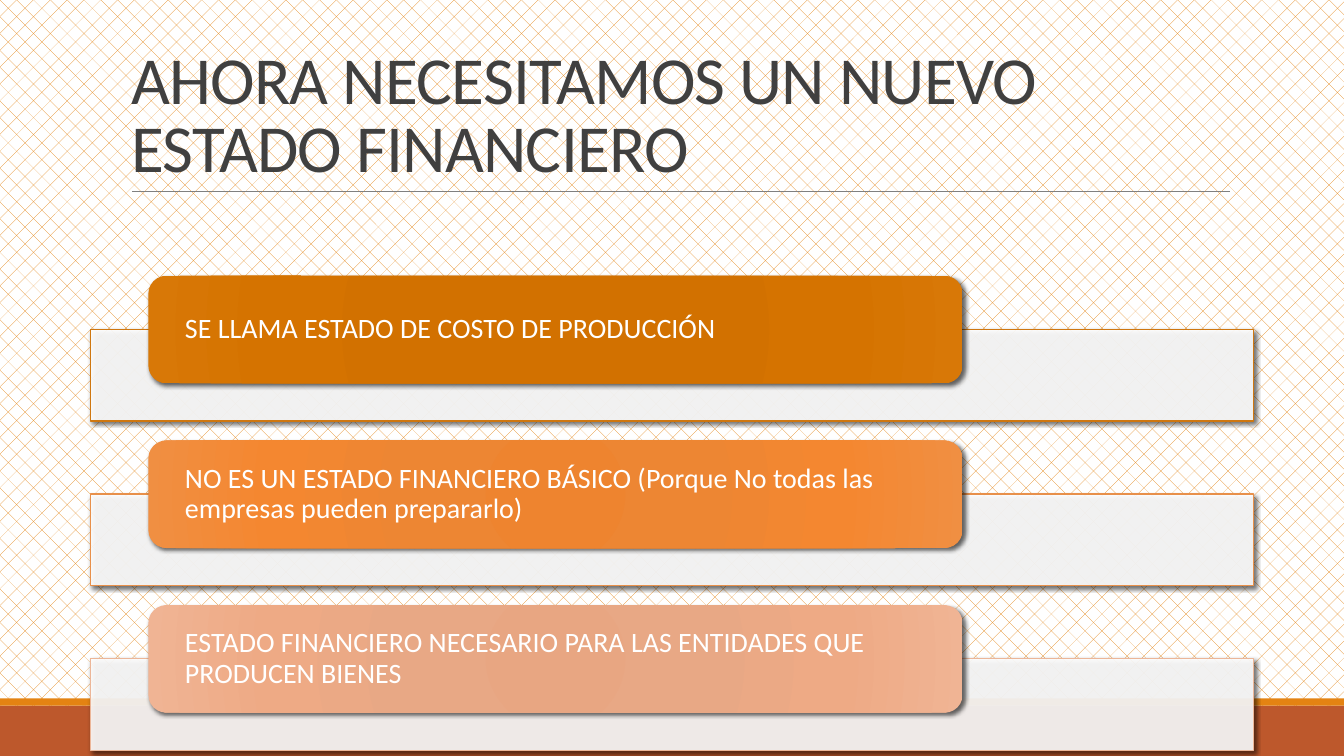
from pptx import Presentation
from pptx.dml.color import RGBColor
from pptx.enum.dml import MSO_PATTERN
from pptx.enum.shapes import MSO_CONNECTOR, MSO_SHAPE
from pptx.enum.text import MSO_ANCHOR, MSO_AUTO_SIZE, PP_ALIGN
from pptx.oxml import parse_xml
from pptx.oxml.ns import nsdecls, qn
from pptx.util import Cm, Pt

SLIDE_WIDTH = 33.87
STATEMENT_PITCH = 4.15
STATEMENTS = [
    ("SE LLAMA ESTADO DE COSTO DE PRODUCCIÓN",
     "CF7710", ["D07000", "D27100", "D57300", "D87807"]),
    ("NO ES UN ESTADO FINANCIERO BÁSICO (Porque No todas las empresas pueden prepararlo)",
     "E8904A", ["EE842F", "ED8633", "F48730", "F08F42"]),
    ("ESTADO FINANCIERO NECESARIO PARA LAS ENTIDADES QUE PRODUCEN BIENES",
     "ECB698", ["E8A682", "E8A885", "EEAA85", "F0B494"]),
]


def color(hex_value):
    """Turn a hex string into a colour."""
    return RGBColor.from_string(hex_value)


def set_background(slide):
    """Cover the slide with an orange diamond pattern on white."""
    fill = slide.background.fill
    fill.patterned()
    fill.pattern = MSO_PATTERN.DOTTED_DIAMOND
    fill.fore_color.rgb = color("E48312")
    fill.back_color.rgb = color("FFFFFF")


def add_block(slide, kind, left, top, width, height, fill):
    """Add a filled shape without outline or shadow."""
    shape = slide.shapes.add_shape(kind, Cm(left), Cm(top), Cm(width), Cm(height))
    shape.fill.solid()
    shape.fill.fore_color.rgb = color(fill)
    shape.line.fill.background()
    shape.shadow.inherit = False
    return shape


def add_shadow(shape, blur):
    """Cast a soft black shadow to the lower right."""
    effects = shape._element.spPr.find(qn("a:effectLst"))
    effects.append(parse_xml(
        f'<a:outerShdw {nsdecls("a")} blurRad="{Pt(blur)}" dist="{Pt(2)}" '
        'dir="2700000" algn="br" rotWithShape="0"><a:srgbClr val="000000">'
        '<a:alpha val="60000"/></a:srgbClr></a:outerShdw>'))


def set_radial_gradient(shape, colors):
    """Replace the solid fill with a circular gradient."""
    stops = "".join(
        f'<a:gs pos="{position}000"><a:srgbClr val="{value}"/></a:gs>'
        for position, value in zip((0, 34, 70, 100), colors))
    gradient = parse_xml(
        f'<a:gradFill {nsdecls("a")} rotWithShape="1"><a:gsLst>{stops}</a:gsLst>'
        '<a:path path="circle"><a:fillToRect l="100000" t="100000" '
        'r="100000" b="100000"/></a:path></a:gradFill>')
    properties = shape._element.spPr
    properties.replace(properties.find(qn("a:solidFill")), gradient)


def write_text(shape, text, size, hex_value, spacing, anchor):
    """Write one left-aligned Calibri paragraph in a shape."""
    frame = shape.text_frame
    frame.text = text
    frame.word_wrap = True
    frame.auto_size = MSO_AUTO_SIZE.NONE
    frame.vertical_anchor = anchor
    paragraph = frame.paragraphs[0]
    paragraph.alignment = PP_ALIGN.LEFT
    paragraph.line_spacing = spacing
    paragraph.font.name = "Calibri"
    paragraph.font.size = Pt(size)
    paragraph.font.color.rgb = color(hex_value)
    return paragraph


def add_title(slide, text):
    """Place the title and the rule below it."""
    title = slide.shapes.title
    title.left, title.top = Cm(3.05), Cm(0.79)
    title.width, title.height = Cm(27.94), Cm(4.04)
    paragraph = write_text(title, text, 48, "404040", 0.85, MSO_ANCHOR.BOTTOM)
    paragraph.font._element.set("spc", "-50")
    rule = slide.shapes.add_connector(
        MSO_CONNECTOR.STRAIGHT, Cm(3.33), Cm(4.82), Cm(31), Cm(4.82))
    rule.line.color.rgb = color("808080")
    rule.line.width = Pt(0.5)
    rule._element.spPr.append(parse_xml(f'<a:effectLst {nsdecls("a")}/>'))


def add_statement(slide, top, text, outline, gradient):
    """Add a white band with a rounded text card overlapping its top."""
    band = add_block(slide, MSO_SHAPE.RECTANGLE, 2.28, top + 1.35, 29.31, 2.31, "FFFFFF")
    band.line.color.rgb = color(outline)
    band.line.width = Pt(1)
    fill_color = band._element.spPr.find(qn("a:solidFill"))[0]
    fill_color.append(parse_xml(f'<a:alpha {nsdecls("a")} val="90000"/>'))
    add_shadow(band, 3)
    card = add_block(slide, MSO_SHAPE.ROUNDED_RECTANGLE, 3.74, top, 20.52, 2.71, gradient[0])
    set_radial_gradient(card, gradient)
    add_shadow(card, 3.5)
    frame = card.text_frame
    frame.margin_left = frame.margin_right = Cm(0.79)
    frame.margin_top = frame.margin_bottom = 0
    write_text(card, text, 20, "FFFFFF", 0.9, MSO_ANCHOR.MIDDLE)


def main():
    """Build and save the slide."""
    presentation = Presentation()
    presentation.slide_width, presentation.slide_height = Cm(SLIDE_WIDTH), Cm(19.05)
    slide = presentation.slides.add_slide(presentation.slide_layouts[5])
    set_background(slide)
    add_block(slide, MSO_SHAPE.RECTANGLE, 0, 17.78, SLIDE_WIDTH, 1.27, "BD582C")
    add_block(slide, MSO_SHAPE.RECTANGLE, 0, 17.6, SLIDE_WIDTH, 0.18, "E48312")
    add_title(slide, "AHORA NECESITAMOS UN NUEVO ESTADO FINANCIERO")
    for index, (text, outline, gradient) in enumerate(STATEMENTS):
        add_statement(slide, 6.95 + index * STATEMENT_PITCH, text, outline, gradient)
    presentation.save("out.pptx")


if __name__ == "__main__":
    main()
